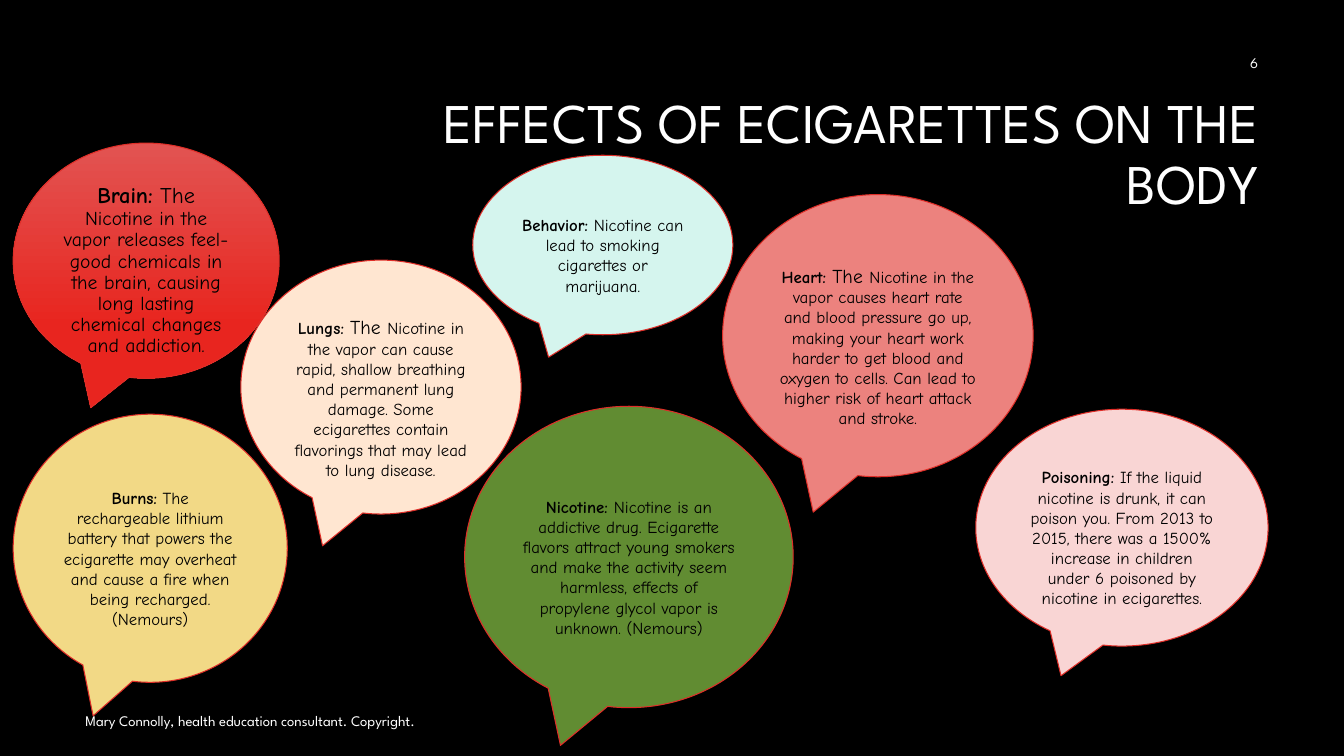
from pptx import Presentation
from pptx.dml.color import RGBColor
from pptx.enum.shapes import MSO_SHAPE
from pptx.enum.text import MSO_ANCHOR, PP_ALIGN
from pptx.util import Pt

CALLOUT = MSO_SHAPE.OVAL_CALLOUT
MIDDLE = MSO_ANCHOR.MIDDLE
LEFT, CENTER, RIGHT = PP_ALIGN.LEFT, PP_ALIGN.CENTER, PP_ALIGN.RIGHT

BLACK = RGBColor(0x00, 0x00, 0x00)
WHITE = RGBColor(0xFF, 0xFF, 0xFF)
OUTLINE = RGBColor(0xDF, 0x2E, 0x28)
RED_TOP = RGBColor(0xE2, 0x54, 0x52)
RED_BASE = RGBColor(0xE8, 0x25, 0x1F)
PEACH = RGBColor(0xFF, 0xE6, 0xD1)
MINT = RGBColor(0xD5, 0xF5, 0xEE)
CORAL = RGBColor(0xEC, 0x82, 0x7E)
PINK = RGBColor(0xF9, 0xD5, 0xD4)
YELLOW = RGBColor(0xF2, 0xD9, 0x86)
GREEN = RGBColor(0x61, 0x8C, 0x32)

HEADING_FONT = "League Spartan"
BUBBLE_FONT = "Comic Neue"

# Box in points, fill colours, line spacing, then runs of (text, size)
# of which the first is bold
BUBBLES = [
    ((9.4, 102.2, 190, 168), (RED_TOP, RED_BASE), 0.9, [
        ("Brain:", 16), (" The ", 16),
        ("Nicotine in the vapor releases feel-good chemicals in the brain, "
         "causing long lasting chemical changes and addiction.", 14)]),
    ((172, 185.8, 200.2, 181.4), (PEACH,), 1.0, [
        ("Lungs: ", 12), ("The ", 14),
        ("Nicotine in the vapor can cause rapid, shallow breathing and "
         "permanent lung damage. Some ecigarettes contain flavorings that "
         "may lead to lung disease.", 12)]),
    ((337.7, 110.9, 185.8, 128.2), (MINT,), 1.0, [
        ("Behavior:", 12),
        (" Nicotine can lead to smoking cigarettes or marijuana.", 12)]),
    ((516.2, 139, 221.8, 201.6), (CORAL,), 1.0, [
        ("Heart: ", 12), ("The ", 14),
        ("Nicotine in the vapor causes heart rate and blood pressure go up, "
         "making your heart work harder to get blood and oxygen to cells. "
         "Can lead to higher risk of heart attack and stroke.", 12)]),
    ((697, 292.3, 208.8, 169.2), (PINK,), 1.0, [
        ("Poisoning:", 12),
        (" If the liquid nicotine is drunk, it can poison you. From 2013 to "
         "2015, there was a 1500% increase in children under 6 poisoned by "
         "nicotine in ecigarettes.", 12)]),
    ((9.4, 295.9, 195.8, 191.5), (YELLOW,), 1.0, [
        ("Burns:", 12),
        (" The rechargeable lithium battery that powers the ecigarette may "
         "overheat and cause a fire when being recharged.(Nemours)", 12)]),
    ((331.9, 290.2, 234.7, 215.3), (GREEN,), 1.0, [
        ("Nicotine: ", 12),
        ("Nicotine is an addictive drug. Ecigarette flavors attract young "
         "smokers and make the activity seem harmless, effects of propylene "
         "glycol vapor is unknown. (Nemours)", 12)]),
]


def set_attrs(obj, values):
    for name, value in values.items():
        setattr(obj, name, value)


def add_run(p, text, font, size, color, bold=False):
    r = p.add_run()
    r.text = text
    set_attrs(r.font, {"name": font, "size": Pt(size), "bold": bold})
    r.font.color.rgb = color


def prepare_text(sp, align, spacing=1.0):
    """Wrap and centre the frame vertically; return its first paragraph."""
    tf = sp.text_frame
    set_attrs(tf, {"word_wrap": True, "vertical_anchor": MIDDLE})
    p = tf.paragraphs[0]
    set_attrs(p, {"alignment": align, "line_spacing": spacing})
    return p


def set_title(s, text):
    sp = s.shapes.title
    set_attrs(sp, {"left": Pt(228.2), "top": Pt(60.5),
                   "width": Pt(678.2), "height": Pt(101.5)})
    p = prepare_text(sp, RIGHT, 0.9)
    add_run(p, text, HEADING_FONT, 40, WHITE)


def add_label(s, box, text, align):
    sp = s.shapes.add_textbox(*map(Pt, box))
    add_run(prepare_text(sp, align), text, HEADING_FONT, 10.5, WHITE)


def fill_shape(sp, colors):
    """Fill with one colour, or with a top-to-bottom gradient of two."""
    if len(colors) == 1:
        sp.fill.solid()
        sp.fill.fore_color.rgb = colors[0]
        return
    sp.fill.gradient()
    sp.fill.gradient_angle = 270
    for stop, color, position in zip(sp.fill.gradient_stops, colors, (0, 0.78)):
        stop.color.rgb = color
        stop.position = position


def add_bubble(s, box, colors, spacing, runs):
    sp = s.shapes.add_shape(CALLOUT, *map(Pt, box))
    sp.shadow.inherit = False
    fill_shape(sp, colors)
    sp.line.color.rgb = OUTLINE
    sp.line.width = Pt(0.75)
    p = prepare_text(sp, CENTER, spacing)
    sp.text_frame.margin_top = Pt(18)
    for i, (text, size) in enumerate(runs):
        add_run(p, text, BUBBLE_FONT, size, BLACK, bold=i == 0)


def main():
    prs = Presentation()
    set_attrs(prs, {"slide_width": Pt(960), "slide_height": Pt(540)})
    s = prs.slides.add_slide(prs.slide_layouts[5])
    s.background.fill.solid()
    s.background.fill.fore_color.rgb = BLACK
    set_title(s, "EFFECTS OF ECIGARETTES ON THE BODY")
    add_label(s, (54, 500.4, 612, 28.8),
              "Mary Connolly, health education consultant. Copyright.", LEFT)
    add_label(s, (689.8, 30.2, 216, 28.8), "6", RIGHT)
    for bubble in BUBBLES:
        add_bubble(s, *bubble)
    prs.save("out.pptx")


if __name__ == "__main__":
    main()
